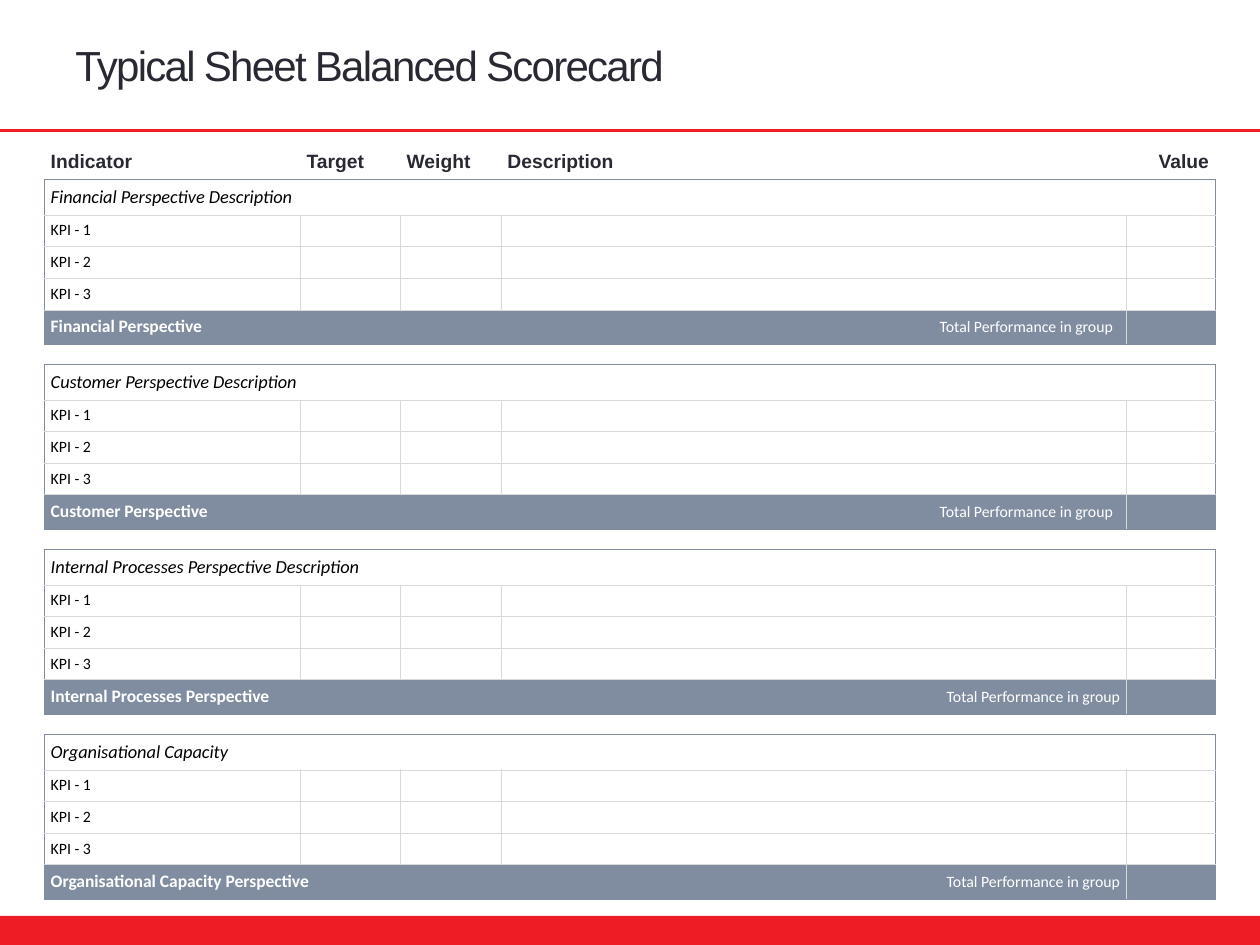
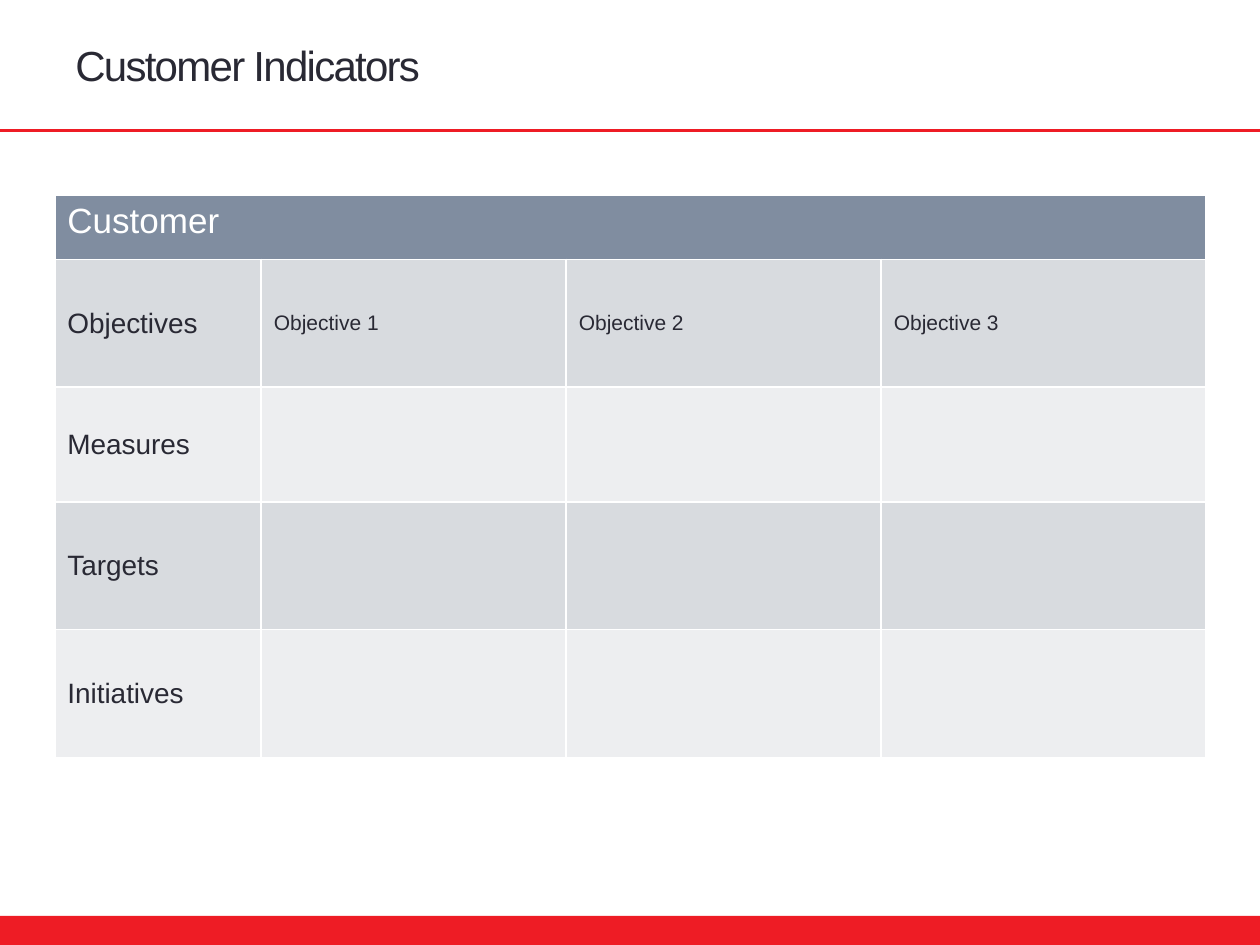
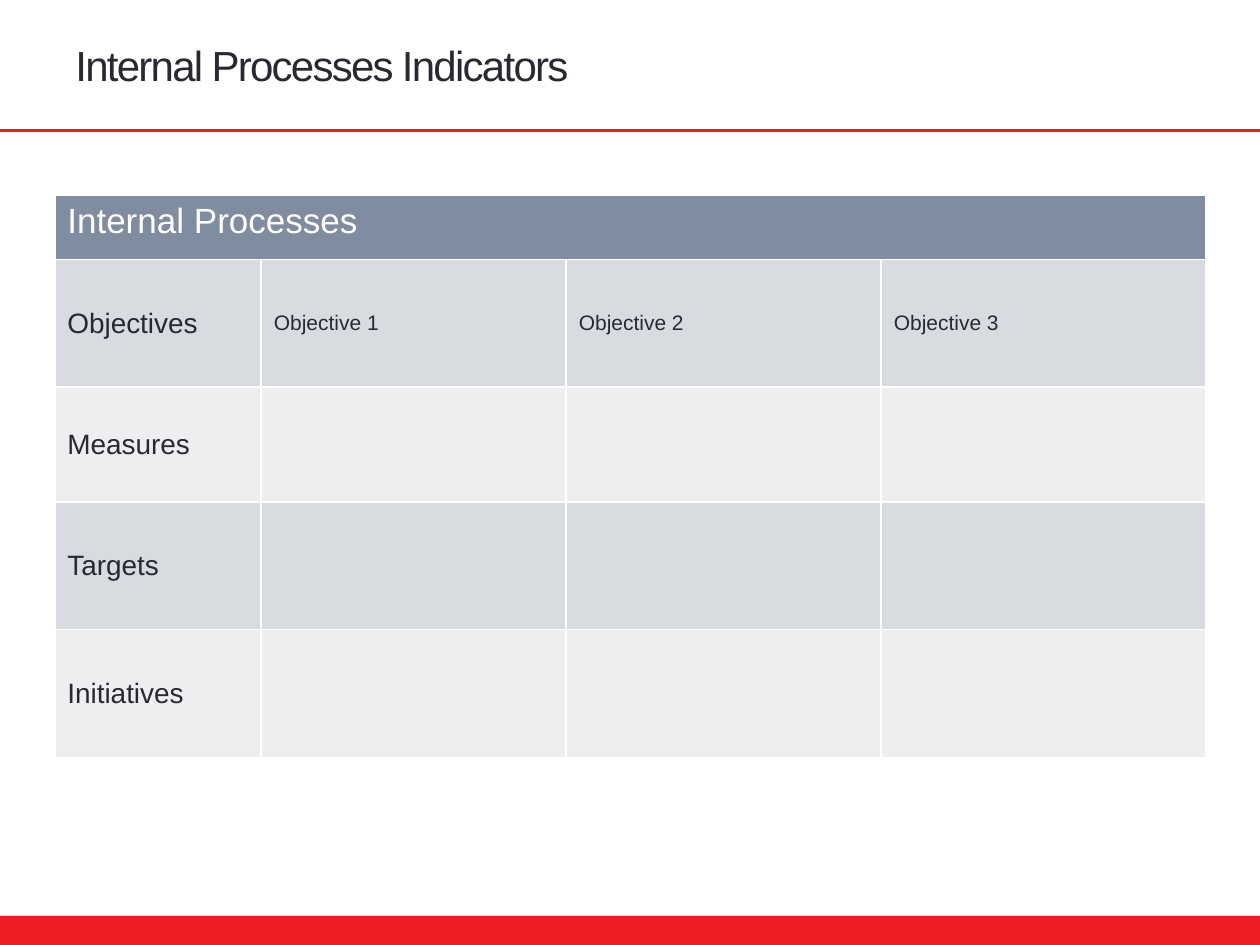
from lxml import etree
from pptx import Presentation
from pptx.dml.color import RGBColor
from pptx.enum import shapes, text
from pptx.oxml import ns
from pptx.util import Pt


class Theme:
    red, ink, black, white = "EE1C25", "292934", "000000", "FFFFFF"
    slate, grid, dark, light = "808DA0", "D9D9D9", "D8DBDF", "EDEEF0"
    sans, body = "Arial", "Calibri"
    title, band, label, item = 24, 20, 16, 12
    head, group, total, kpi, gap = 11, 10.5, 10, 9, 4


def write(box, words, size, color, face=Theme.sans, bold=False, ital=False):
    """Write one run; an empty text only fixes the line height."""
    para = box.text_frame.paragraphs[0]
    if not words:
        end = etree.SubElement(para._p, ns.qn("a:endParaRPr"))
        end.set("sz", str(int(size * 100)))
        return para
    run = para.add_run()
    run.text = words
    font = run.font
    font.name, font.size, font.bold, font.italic = face, Pt(size), bold, ital
    font.color.rgb = RGBColor.from_string(color)
    return para


def dress(cell, fill, edges, pad, anchor=text.MSO_ANCHOR.MIDDLE):
    """Set borders (side -> colour and width), fill, margins and anchor."""
    props = cell._tc.get_or_add_tcPr()
    for side in "LRTB":
        line = etree.SubElement(props, ns.qn("a:ln" + side))
        if side in edges:
            color, width = edges[side]
            line.set("w", str(int(Pt(width))))
            solid = etree.SubElement(line, ns.qn("a:solidFill"))
            etree.SubElement(solid, ns.qn("a:srgbClr")).set("val", color)
        else:
            etree.SubElement(line, ns.qn("a:noFill"))
    if fill:
        cell.fill.solid()
        cell.fill.fore_color.rgb = RGBColor.from_string(fill)
    else:
        cell.fill.background()
    cell.margin_left = cell.margin_right = Pt(pad[0])
    cell.margin_top = cell.margin_bottom = Pt(pad[1])
    cell.vertical_anchor = anchor


deck = Presentation()
deck.slide_width, deck.slide_height = Pt(720), Pt(540)

# Shared frame: footer band, rule and title; then an empty table
score_cols = [146.2, 57.2, 57.6, 357.2, 50.9]
score_rows = [19.7] + ([20] + [18.1] * 3 + [19.6, 11.9]) * 4
plan_cols = [118, 174.3, 180, 185.5]
plan_rows = [36.7, 73, 65.5, 73, 73]
pages = [
    ("Typical Sheet Balanced Scorecard", 25.4, 82.3, score_cols, score_rows[:-1]),
    ("Customer Indicators", 31.3, 111.6, plan_cols, plan_rows),
    ("Internal Processes Indicators", 31.3, 111.6, plan_cols, plan_rows),
]
tables = []
for name, left, top, cols, rows in pages:
    slide = deck.slides.add_slide(deck.slide_layouts[6])
    band = slide.shapes.add_shape(
        shapes.MSO_SHAPE.RECTANGLE, 0, Pt(523.4), Pt(720), Pt(17))
    band.shadow.inherit = False
    band.fill.solid()
    band.fill.fore_color.rgb = RGBColor.from_string(Theme.red)
    band.line.fill.background()

    rule = slide.shapes.add_connector(
        shapes.MSO_CONNECTOR.STRAIGHT, 0, Pt(74.6), Pt(720), Pt(74.6))
    rule.line.color.rgb = RGBColor.from_string(Theme.red)
    rule.line.width = Pt(1.5)
    etree.SubElement(rule._element.spPr, ns.qn("a:effectLst"))

    title = slide.shapes.add_textbox(Pt(36), Pt(10.8), Pt(499.7), Pt(51.8))
    frame = title.text_frame
    frame.word_wrap = True
    frame.vertical_anchor = text.MSO_ANCHOR.MIDDLE
    frame.margin_top = frame.margin_bottom = 0
    para = write(title, name, Theme.title, Theme.ink)
    para.runs[0].font._element.set("spc", "-100")

    table = slide.shapes.add_table(
        len(rows), len(cols), Pt(left), Pt(top), Pt(sum(cols)), Pt(sum(rows))).table
    table.first_row = table.horz_banding = False
    for col, width in zip(table.columns, cols):
        col.width = Pt(width)
    for row, height in zip(table.rows, rows):
        row.height = Pt(height)
    tables.append(table)

# Scorecard: header row
score = tables[0]
rim, thin, split = (Theme.slate, 0.5), (Theme.grid, 0.25), (Theme.grid, 0.5)
heads = ["Indicator", "Target", "Weight", "Description", "Value"]
last = len(heads) - 1
for c, head in enumerate(heads):
    cell = score.cell(0, c)
    dress(cell, None, {"B": rim}, (3.6, 3.6))
    para = write(cell, head, Theme.head, Theme.ink, bold=True)
    if c == last:
        para.alignment = text.PP_ALIGN.RIGHT

# Scorecard: four groups of intro, three indicators, total and gap
groups = [
    ("Financial Perspective Description", "Financial Perspective", 7.7),
    ("Customer Perspective Description", "Customer Perspective", 7.7),
    ("Internal Processes Perspective Description", "Internal Processes Perspective", 3.6),
    ("Organisational Capacity", "Organisational Capacity Perspective", 3.6),
]
for g, (intro, total, inset) in enumerate(groups):
    start = 1 + g * 6
    kinds = ["intro", "kpi", "kpi", "kpi", "total", "gap"]
    if g == len(groups) - 1:
        kinds.pop()
    for k, kind in enumerate(kinds):
        r = start + k
        if kind != "kpi":
            score.cell(r, 0).merge(score.cell(r, 1))
        for c in range(len(heads)):
            cell = score.cell(r, c)
            edges = {"T": rim if kind in ("intro", "gap") else thin,
                     "B": rim if kind in ("total", "gap") else thin}
            if kind != "gap" and c == 0:
                edges["L"] = rim
            if kind != "gap" and c == last:
                edges["R"] = rim
            if kind == "kpi":
                edges.setdefault("L", thin)
                edges.setdefault("R", thin)
            if kind == "total" and c >= last - 1:
                edges["R" if c < last else "L"] = split
            fill = Theme.slate if kind == "total" else None
            dress(cell, fill, edges, (3.6, 0 if kind == "gap" else 3.6))

            if kind == "intro" and c == 0:
                write(cell, intro, Theme.group, Theme.black, Theme.body, ital=True)
            elif kind == "kpi" and c == 0:
                write(cell, f"KPI - {k}", Theme.kpi, Theme.black, Theme.body)
            elif kind == "total" and c == 0:
                write(cell, total, Theme.total, Theme.white, Theme.body, bold=True)
            elif kind == "total" and c == last - 1:
                para = write(cell, "Total Performance in group", Theme.kpi,
                             Theme.white, Theme.body)
                para.alignment = text.PP_ALIGN.RIGHT
                cell.margin_right = Pt(inset)
            else:
                write(cell, "", Theme.gap, Theme.black)

# Indicator plans: one band row, then four labelled rows
labels = ["Objectives", "Measures", "Targets", "Initiatives"]
edges = dict.fromkeys("LRTB", (Theme.white, 1))
for plan, name in zip(tables[1:], ["Customer", "Internal Processes"]):
    plan.cell(0, 0).merge(plan.cell(0, 3))
    for c in range(4):
        dress(plan.cell(0, c), Theme.slate, edges, (7.2, 3.6), text.MSO_ANCHOR.TOP)
    write(plan.cell(0, 0), name, Theme.band, Theme.white)
    for r, label in enumerate(labels, 1):
        for c in range(4):
            cell = plan.cell(r, c)
            dress(cell, Theme.dark if r % 2 else Theme.light, edges, (7.2, 3.6))
            if c == 0:
                write(cell, label, Theme.label, Theme.ink)
            else:
                words = f"Objective {c}" if r == 1 else ""
                write(cell, words, Theme.item, Theme.ink)

deck.save("out.pptx")
